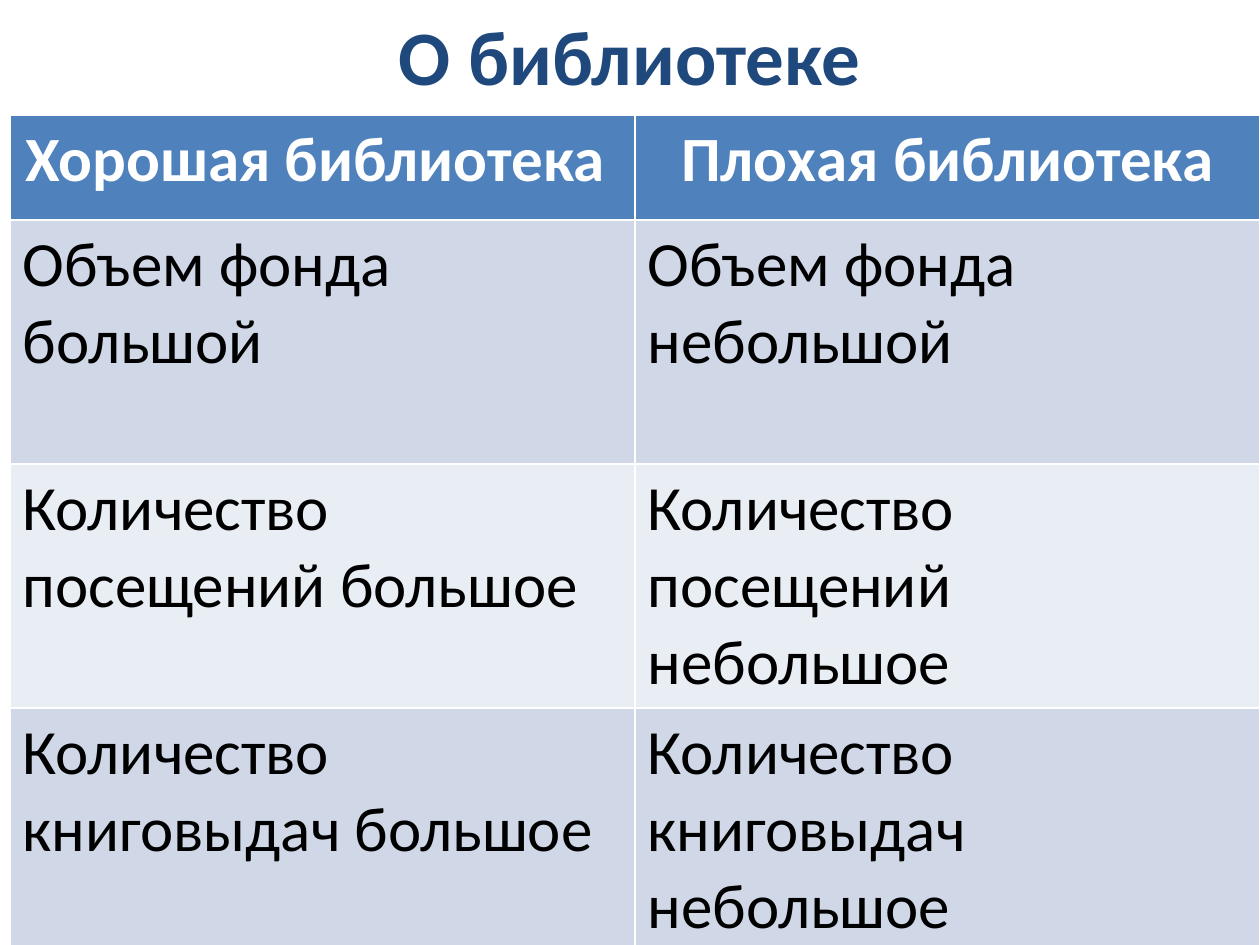
from pptx import Presentation
from pptx.dml.color import RGBColor
from pptx.enum.text import MSO_ANCHOR, PP_ALIGN
from pptx.util import Cm, Pt

COLORS = {
    "title": "1F497D",
    "header": "4F81BD",
    "header_text": "FFFFFF",
    "odd_row": "D0D8E8",
    "even_row": "E9EDF4",
    "text": "000000",
}
FONT = "Calibri"
HEADER_HEIGHT = Cm(2.1)
ROWS = [
    ("Хорошая библиотека ", "Плохая библиотека"),
    ("Объем фонда большой", "Объем фонда небольшой"),
    ("Количество посещений большое", "Количество посещений небольшое"),
    ("Количество книговыдач большое", "Количество книговыдач небольшое"),
]


def add_text(frame, text, size, color, bold, align):
    """Write one formatted run into the first paragraph of a text frame."""
    para = frame.paragraphs[0]
    para.alignment = align
    span = para.add_run()
    span.text = text
    span.font.name = FONT
    span.font.size = Pt(size)
    span.font.bold = bold
    span.font.color.rgb = RGBColor.from_string(COLORS[color])


def place_title(page, left, top, width, height):
    """Move the title placeholder into its box and fill it."""
    title = page.shapes.title
    title.left, title.top, title.width, title.height = left, top, width, height
    title.text_frame.vertical_anchor = MSO_ANCHOR.MIDDLE
    add_text(title.text_frame, "О библиотеке", 44, "title", True, PP_ALIGN.CENTER)


def place_comparison(page, left, top, width, height):
    """Build the table of good and bad library traits in its box."""
    box = page.shapes.add_table(len(ROWS), len(ROWS[0]), left, top, width, height)
    table = box.table
    body_height = (height - HEADER_HEIGHT) // (len(ROWS) - 1)
    for number, texts in enumerate(ROWS):
        header = number == 0
        table.rows[number].height = HEADER_HEIGHT if header else body_height
        fill = "header" if header else "odd_row" if number % 2 else "even_row"
        color = "header_text" if header else "text"
        align = PP_ALIGN.CENTER if header else PP_ALIGN.LEFT
        for column, text in enumerate(texts):
            cell = table.cell(number, column)
            cell.fill.solid()
            cell.fill.fore_color.rgb = RGBColor.from_string(COLORS[fill])
            add_text(cell.text_frame, text, 36, color, header, align)


def main():
    """Create the deck with its single slide."""
    deck = Presentation()
    deck.slide_width, deck.slide_height = Cm(25.4), Cm(19.05)
    page = deck.slides.add_slide(deck.slide_layouts[5])
    place_title(page, Cm(1.27), Cm(-0.2), Cm(22.86), Cm(2.62))
    place_comparison(page, Cm(0.2), Cm(2.33), Cm(25.2), Cm(16.86))
    deck.save("out.pptx")


if __name__ == "__main__":
    main()
